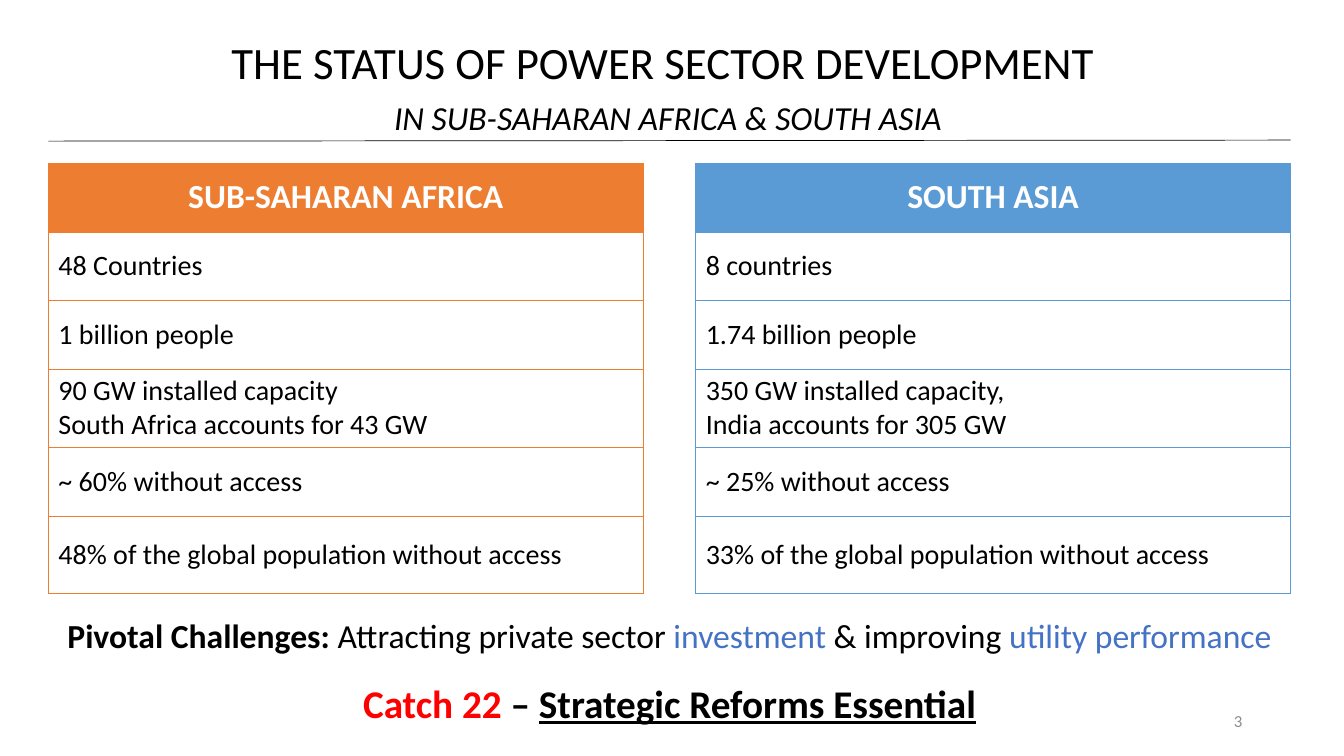
from lxml.etree import SubElement
from pptx import Presentation
from pptx.dml.color import RGBColor
from pptx.enum.shapes import MSO_CONNECTOR
from pptx.enum.text import MSO_ANCHOR, MSO_AUTO_SIZE, PP_ALIGN
from pptx.oxml.ns import qn
from pptx.util import Inches, Pt

COLORS = {
    "text": "000000",
    "header text": "FFFFFF",
    "africa": "ED7D31",
    "asia": "5B9BD5",
    "highlight": "4472C4",
    "alert": "FF0000",
    "page number": "8C8C8C",
}
FONT = "Calibri"

# Two equal columns with a gutter between the slide margins, in inches
WIDTH, HEIGHT = 13.33, 7.5
MARGIN, CONTENT, GUTTER = 0.48, 12.32, 0.52
COLUMN = (CONTENT - GUTTER) / 2
TABLE_TOP = 1.62
ROW, TALL_ROW = 0.68, 0.77
ROW_HEIGHTS = [ROW, ROW, ROW, TALL_ROW, ROW, TALL_ROW]

AFRICA_FACTS = [
    "48 Countries",
    "1 billion people",
    "90 GW installed capacity\nSouth Africa accounts for 43 GW",
    "~ 60% without access",
    "48% of the global population without access",
]
ASIA_FACTS = [
    "8 countries",
    "1.74 billion people",
    "350 GW installed capacity,\nIndia accounts for 305 GW",
    "~ 25% without access",
    "33% of the global population without access",
]


def rgb(name):
    return RGBColor.from_string(COLORS[name])


def add_text(paragraph, text, size=24, color="text", bold=False, italic=False, underline=False):
    run = paragraph.add_run()
    run.text = text
    font = run.font
    font.name, font.size = FONT, Pt(size)
    font.bold, font.italic, font.underline = bold, italic, underline
    font.color.rgb = rgb(color)


def add_line_of_text(slide, box, pieces, align=PP_ALIGN.CENTER, anchor=MSO_ANCHOR.TOP):
    """Add a one-paragraph text box; each piece is a text with its format."""
    frame = slide.shapes.add_textbox(*map(Inches, box)).text_frame
    frame.word_wrap = True
    frame.vertical_anchor = anchor
    paragraph = frame.paragraphs[0]
    paragraph.alignment = align
    for text, style in pieces:
        add_text(paragraph, text, **style)


def set_title(slide, heading, subheading):
    title = slide.shapes.title
    title.left, title.top = Inches(1.98), Inches(0.29)
    title.width, title.height = Inches(9.29), Inches(1.13)
    frame = title.text_frame
    frame.word_wrap = True
    frame.auto_size = MSO_AUTO_SIZE.NONE
    frame.vertical_anchor = MSO_ANCHOR.TOP
    first, second = frame.paragraphs[0], frame.add_paragraph()
    first.alignment = second.alignment = PP_ALIGN.CENTER
    first.space_after = Pt(6)
    add_text(first, heading, size=32)
    add_text(second, subheading, italic=True)


def add_rule(slide, start, end):
    rule = slide.shapes.add_connector(MSO_CONNECTOR.STRAIGHT, *map(Inches, start + end))
    rule.line.color.rgb = rgb("text")
    rule.line.width = Pt(0.5)
    SubElement(rule._element.spPr, qn("a:effectLst"))


def set_borders(cell, color):
    properties = cell._tc.get_or_add_tcPr()
    for index, side in enumerate(("a:lnL", "a:lnR", "a:lnT", "a:lnB")):
        line = SubElement(properties, qn(side), w=str(Pt(0.5)))
        fill = SubElement(line, qn("a:solidFill"))
        SubElement(fill, qn("a:srgbClr"), val=COLORS[color])
        properties.remove(line)
        properties.insert(index, line)  # borders come before the fill


def add_region_table(slide, column, color, region, facts):
    left = MARGIN + column * (COLUMN + GUTTER)
    box = (left, TABLE_TOP, COLUMN, sum(ROW_HEIGHTS))
    table = slide.shapes.add_table(len(ROW_HEIGHTS), 1, *map(Inches, box)).table
    table.horz_banding = False
    for index, text in enumerate([region] + facts):
        is_header = index == 0
        table.rows[index].height = Inches(ROW_HEIGHTS[index])
        cell = table.cell(index, 0)
        cell.vertical_anchor = MSO_ANCHOR.MIDDLE
        if is_header:
            cell.fill.solid()
            cell.fill.fore_color.rgb = rgb(color)
        else:
            cell.fill.background()
        set_borders(cell, color)
        frame = cell.text_frame
        for number, line in enumerate(text.split("\n")):
            paragraph = frame.add_paragraph() if number else frame.paragraphs[0]
            paragraph.alignment = PP_ALIGN.CENTER if is_header else PP_ALIGN.LEFT
            add_text(paragraph, line, size=24 if is_header else 20,
                     color="header text" if is_header else "text", bold=is_header)


def main():
    presentation = Presentation()
    presentation.slide_width, presentation.slide_height = Inches(WIDTH), Inches(HEIGHT)
    slide = presentation.slides.add_slide(presentation.slide_layouts.get_by_name("Title Only"))

    set_title(slide, "THE STATUS OF POWER SECTOR DEVELOPMENT ",
              "IN SUB-SAHARAN AFRICA & SOUTH ASIA")
    add_rule(slide, (MARGIN, 1.4), (MARGIN + CONTENT, 1.39))
    add_region_table(slide, 0, "africa", "SUB-SAHARAN AFRICA", AFRICA_FACTS)
    add_region_table(slide, 1, "asia", "SOUTH ASIA", ASIA_FACTS)

    add_line_of_text(slide, (MARGIN, 6.05, CONTENT, 0.5), [
        ("Pivotal Challenges: ", {"bold": True}),
        ("Attracting private sector ", {}),
        ("investment", {"color": "highlight"}),
        (" & improving", {}),
        (" utility performance", {"color": "highlight"}),
    ])
    add_line_of_text(slide, (MARGIN, 6.69, CONTENT, 0.57), [
        ("Catch 22 ", {"size": 28, "color": "alert", "bold": True}),
        ("– ", {"size": 28, "bold": True}),
        ("Strategic Reforms Essential", {"size": 28, "bold": True, "underline": True}),
    ])
    add_line_of_text(slide, (9.42, 6.95, 3, 0.4), [("3", {"size": 12, "color": "page number"})],
                     align=PP_ALIGN.RIGHT, anchor=MSO_ANCHOR.MIDDLE)

    presentation.save("out.pptx")


if __name__ == "__main__":
    main()
